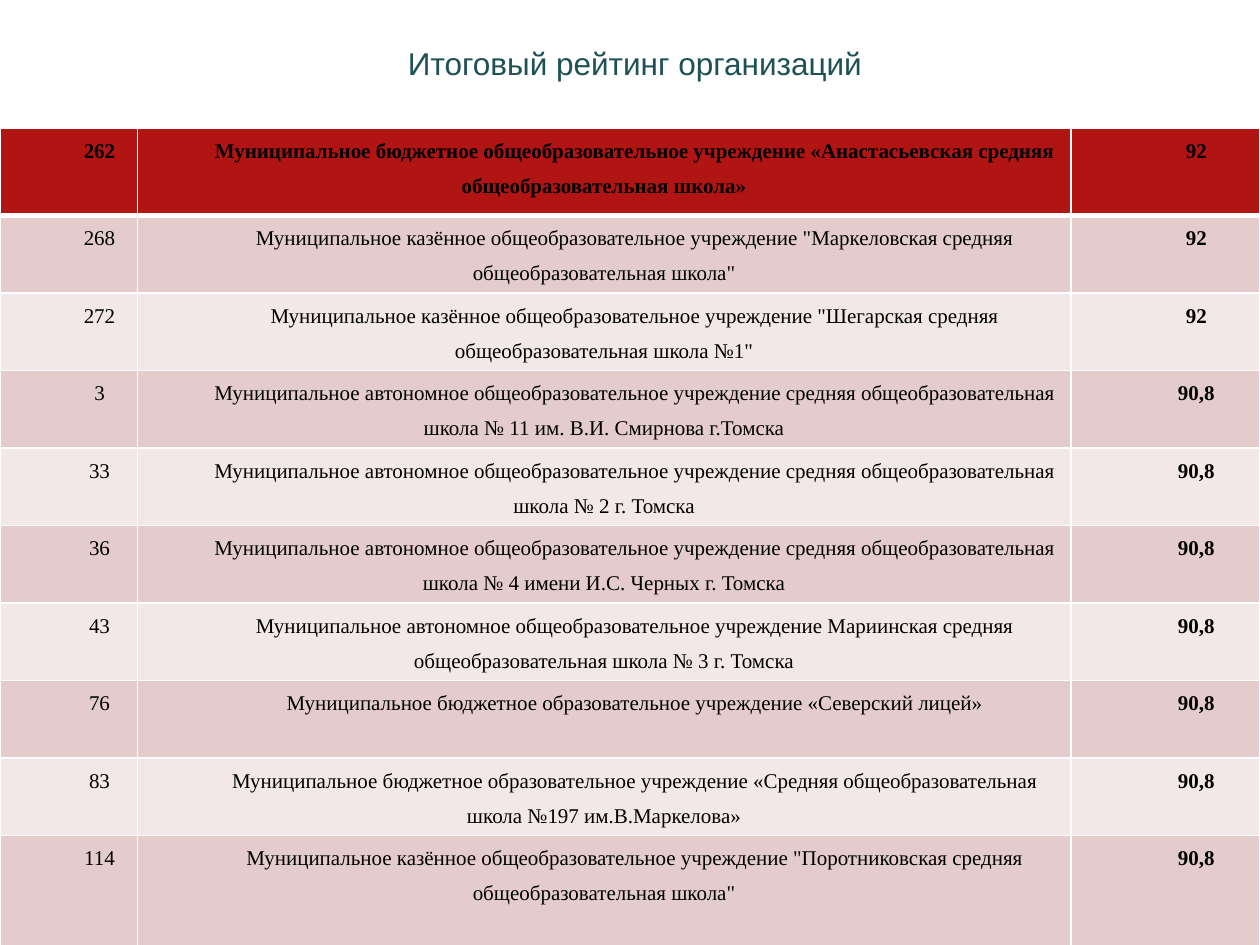
from typing import NamedTuple

from lxml.etree import SubElement
from pptx import Presentation
from pptx.dml.color import RGBColor
from pptx.enum.text import MSO_ANCHOR as Anchor, PP_ALIGN as Align
from pptx.oxml.ns import qn
from pptx.util import Inches, Pt


class School(NamedTuple):
    rank: str
    name: str
    score: str


SCHOOLS = [
    School("262", "Муниципальное бюджетное общеобразовательное учреждение «Анастасьевская средняя общеобразовательная школа»", "92"),
    School("268", 'Муниципальное казённое общеобразовательное учреждение "Маркеловская средняя общеобразовательная школа"', "92"),
    School("272", 'Муниципальное казённое общеобразовательное учреждение "Шегарская средняя общеобразовательная школа №1"', "92"),
    School("3", "Муниципальное автономное общеобразовательное учреждение средняя общеобразовательная школа № 11 им. В.И. Смирнова г.Томска", "90,8"),
    School("33", "Муниципальное автономное общеобразовательное учреждение средняя общеобразовательная школа № 2 г. Томска", "90,8"),
    School("36", "Муниципальное автономное общеобразовательное учреждение средняя общеобразовательная школа № 4 имени И.С. Черных г. Томска", "90,8"),
    School("43", "Муниципальное автономное общеобразовательное учреждение Мариинская средняя общеобразовательная школа № 3 г. Томска", "90,8"),
    School("76", "Муниципальное бюджетное образовательное учреждение «Северский лицей»", "90,8"),
    School("83", "Муниципальное бюджетное образовательное учреждение «Средняя общеобразовательная школа №197 им.В.Маркелова»", "90,8"),
    School("114", 'Муниципальное казённое общеобразовательное учреждение "Поротниковская средняя общеобразовательная школа"', "90,8"),
]
WIDTHS = [1.09, 7.41, 1.5]
HEIGHT, FIRST, LAST = 6.64, 0.69, 1.03
MIDDLE = (HEIGHT - FIRST - LAST) / (len(SCHOOLS) - 2)
HEAD, BANDS = "B01513", ["F2E8E7", "E4CCCC"]


def color(value: str) -> RGBColor:
    return RGBColor.from_string(value)


def write(frame, text: str, *, size: float, font: str, fill: str,
          bold: bool = False, indent: float = 0, spacing: float = 1) -> None:
    frame.word_wrap = True
    par = frame.paragraphs[0]
    par.alignment = Align.CENTER
    par.line_spacing = spacing
    props = par._p.get_or_add_pPr()
    props.set("marL", "0")
    props.set("indent", str(Inches(indent)))
    run = par.add_run()
    run.text = text
    run.font.size = Pt(size)
    run.font.name = font
    run.font.bold = bold
    run.font.color.rgb = color(fill)


def border(cell, top: float, bottom: float) -> None:
    props = cell._tc.get_or_add_tcPr()
    sides = {"L": 1, "R": 1, "T": top, "B": bottom}
    for place, (side, width) in enumerate(sides.items()):
        line = SubElement(props, qn(f"a:ln{side}"), w=str(Pt(width)))
        solid = SubElement(line, qn("a:solidFill"))
        SubElement(solid, qn("a:srgbClr"), val="FFFFFF")
        props.insert(place, line)


def draw_cell(cell, text: str, row: int, bold: bool) -> None:
    cell.margin_left = cell.margin_right = Inches(0.07)
    cell.margin_top = cell.margin_bottom = 0
    cell.fill.solid()
    cell.fill.fore_color.rgb = color(BANDS[row % 2] if row else HEAD)
    border(cell, top=3 if row == 1 else 1, bottom=1 if row else 3)
    write(cell.text_frame, text, size=12, font="Times New Roman",
          fill="000000", bold=bold, indent=0.49, spacing=1.5)


def draw_table(slide) -> None:
    table = slide.shapes.add_table(
        len(SCHOOLS), len(WIDTHS), 0, Inches(1.02), Inches(10), Inches(HEIGHT)).table
    table.first_row = table.horz_banding = False
    for column, width in zip(table.columns, WIDTHS):
        column.width = Inches(width)
    heights = [FIRST] + [MIDDLE] * (len(SCHOOLS) - 2) + [LAST]
    for row, (school, height) in enumerate(zip(SCHOOLS, heights)):
        table.rows[row].height = Inches(height)
        for col, text in enumerate(school):
            draw_cell(table.cell(row, col), text, row, bold=row == 0 or col == 2)


def draw_title(slide) -> None:
    box = slide.shapes.add_textbox(Inches(0.54), Inches(0.3), Inches(9), Inches(0.4))
    box.text_frame.vertical_anchor = Anchor.MIDDLE
    write(box.text_frame, "Итоговый рейтинг организаций",
          size=18, font="Arial", fill="1E5155")


def main() -> None:
    deck = Presentation()
    deck.slide_width, deck.slide_height = Inches(10), Inches(7.5)
    slide = deck.slides.add_slide(deck.slide_layouts[6])
    draw_title(slide)
    draw_table(slide)
    deck.save("out.pptx")


if __name__ == "__main__":
    main()
